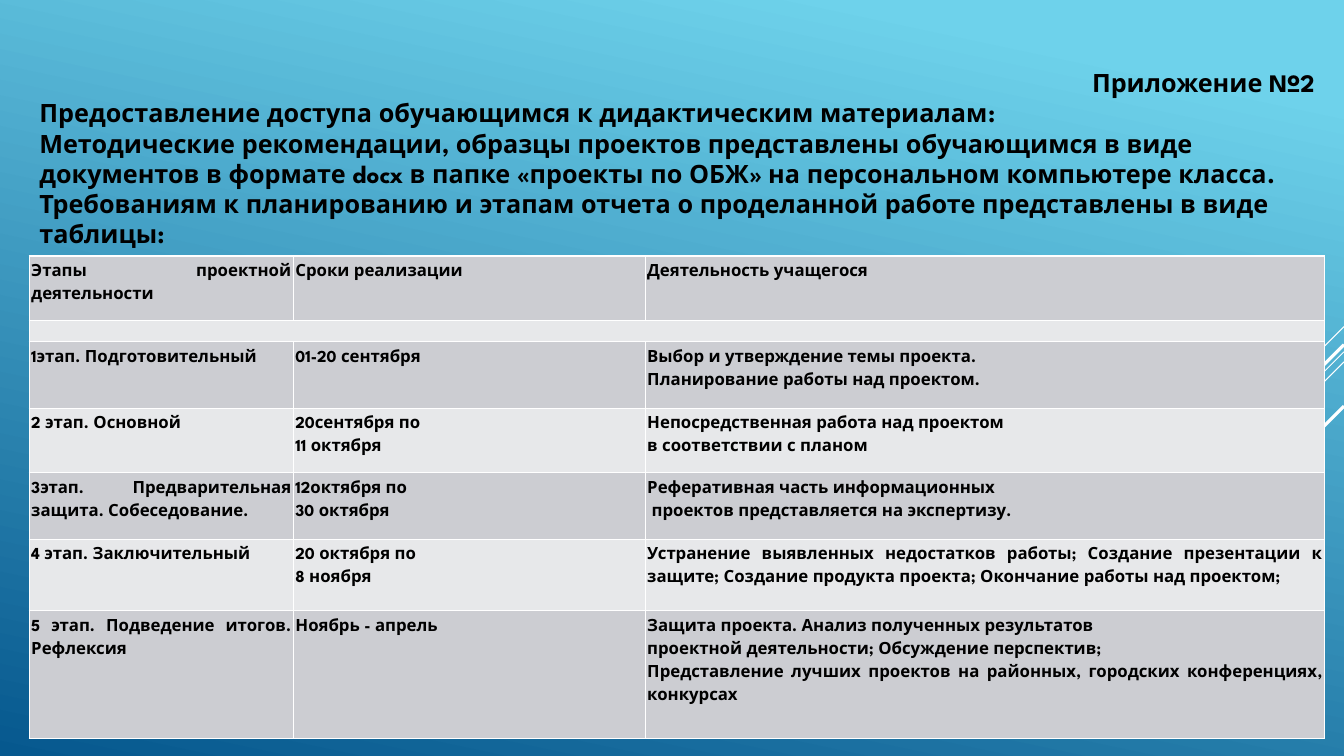
from typing import NamedTuple

import pptx
import pptx.dml.color
import pptx.enum.shapes
import pptx.enum.text
import pptx.oxml
import pptx.oxml.ns
import pptx.util

Inches = pptx.util.Inches
Pt = pptx.util.Pt
Align = pptx.enum.text.PP_ALIGN

FONT = "League Spartan"
COLORS = {
    "sky": "6ED2EB",
    "deep": "06588E",
    "text": "000000",
    "line": "FFFFFF",
    "dark_band": "CCCDD2",
    "light_band": "E7E8EA",
}


class Ray(NamedTuple):
    """Diagonal falling from the right edge at height top down to the left."""
    top: float
    reach: float
    weight: float


class Stage(NamedTuple):
    height: float
    name: list[str]
    dates: list[str]
    work: list[str]


RAYS = [
    Ray(3.24, 1.0, 0.75),
    Ray(3.49, 3.26, 0.75),
    Ray(3.59, 2.07, 0.75),
    Ray(3.42, 1.91, 2.25),
    Ray(4.03, 1.39, 2.25),
]

HEADING = [
    "Приложение №2",
    "Предоставление доступа обучающимся к дидактическим материалам:",
    "Методические рекомендации, образцы проектов представлены обучающимся в виде "
    "документов в формате docx в папке «проекты по ОБЖ» на персональном компьютере класса.",
    "Требованиям к планированию и этапам отчета о проделанной работе представлены "
    "в виде таблицы:",
]

COLUMN_WIDTHS = [2.62, 3.49, 6.74]
SPACER_ROW = 1
STAGES = [
    Stage(0.64, ["Этапы проектной деятельности"], ["Сроки реализации"],
          ["Деятельность учащегося"]),
    Stage(0.08, [], [], []),
    Stage(0.66, ["1этап. Подготовительный"], ["01-20 сентября"],
          ["Выбор и утверждение темы проекта.", "Планирование работы над проектом."]),
    Stage(0.64, ["2 этап. Основной"], ["20сентября по", "11 октября"],
          ["Непосредственная работа над проектом", "в соответствии с планом"]),
    Stage(0.66, ["3этап. Предварительная защита. Собеседование."],
          ["12октября по", "30 октября"],
          ["Реферативная часть информационных", " проектов представляется на экспертизу."]),
    Stage(0.71, ["4 этап. Заключительный"], ["20 октября по", "8 ноября"],
          ["Устранение выявленных недостатков работы; Создание презентации к защите; "
           "Создание продукта проекта; Окончание работы над проектом;"]),
    Stage(1.27, ["5 этап. Подведение итогов. Рефлексия"], ["Ноябрь - апрель"],
          ["Защита проекта. Анализ полученных результатов",
           "проектной деятельности; Обсуждение перспектив;",
           "Представление лучших проектов на районных, городских конференциях, конкурсах"]),
]


def rgb(name: str) -> pptx.dml.color.RGBColor:
    return pptx.dml.color.RGBColor.from_string(COLORS[name])


def write_paragraphs(frame, lines: list[str], size: float, align: Align,
                     spacing: float) -> None:
    for index, line in enumerate(lines):
        paragraph = frame.paragraphs[0] if index == 0 else frame.add_paragraph()
        paragraph.alignment = align
        paragraph.line_spacing = spacing
        run = paragraph.add_run()
        run.text = line
        run.font.name = FONT
        run.font.size = Pt(size)
        run.font.bold = True
        run.font.color.rgb = rgb("text")


def paint_background(slide) -> None:
    fill = slide.background.fill
    fill.gradient()
    fill.gradient_angle = 360 - 102
    for stop, position, name in zip(fill.gradient_stops, (0.1, 1), ("sky", "deep")):
        stop.position = position
        stop.color.rgb = rgb(name)


def draw_ray(slide, ray: Ray) -> None:
    right = 13.33
    line = slide.shapes.add_connector(
        pptx.enum.shapes.MSO_CONNECTOR.STRAIGHT, Inches(right), Inches(ray.top),
        Inches(right - ray.reach), Inches(ray.top + ray.reach))
    line.line.color.rgb = rgb("line")
    line.line.width = Pt(ray.weight)
    properties = line._element.spPr
    properties.append(properties.makeelement(pptx.oxml.ns.qn("a:effectLst"), {}))


def write_heading(slide) -> None:
    heading = slide.shapes.title
    heading.left, heading.top = Inches(0.29), Inches(0.62)
    heading.width, heading.height = Inches(12.85), Inches(1.92)
    frame = heading.text_frame
    frame.word_wrap = True
    frame.auto_size = pptx.enum.text.MSO_AUTO_SIZE.SHAPE_TO_FIT_TEXT
    frame.vertical_anchor = pptx.enum.text.MSO_ANCHOR.TOP
    write_paragraphs(frame, HEADING, 18, Align.LEFT, 1)
    frame.paragraphs[0].alignment = Align.RIGHT


def style_cell(cell, band: str) -> None:
    cell.margin_left = cell.margin_right = Inches(0.02)
    cell.margin_top, cell.margin_bottom = Inches(0.01), 0
    properties = cell._tc.get_or_add_tcPr()
    for side in ("lnL", "lnR", "lnT", "lnB"):
        properties.append(pptx.oxml.parse_xml(
            f'<a:{side} {pptx.oxml.ns.nsdecls("a")} w="{Pt(1)}"><a:solidFill>'
            f'<a:srgbClr val="{COLORS["line"]}"/></a:solidFill></a:{side}>'))
    cell.fill.solid()
    cell.fill.fore_color.rgb = rgb(band)


def set_empty_size(cell, size: float) -> None:
    """Keeps a row without text as low as a line of the given size."""
    cell.text_frame.paragraphs[0]._p.append(pptx.oxml.parse_xml(
        f'<a:endParaRPr {pptx.oxml.ns.nsdecls("a")} sz="{int(size * 100)}">'
        f'<a:latin typeface="{FONT}"/></a:endParaRPr>'))


def add_stage_table(slide) -> None:
    table = slide.shapes.add_table(
        len(STAGES), len(COLUMN_WIDTHS), Inches(0.29), Inches(2.54),
        Inches(sum(COLUMN_WIDTHS)), Inches(sum(stage.height for stage in STAGES))).table
    table.first_row = table.horz_banding = False
    for column, width in zip(table.columns, COLUMN_WIDTHS):
        column.width = Inches(width)
    for index, stage in enumerate(STAGES):
        row = table.rows[index]
        row.height = Inches(stage.height)
        band = "light_band" if index % 2 else "dark_band"
        for cell, lines in zip(row.cells, (stage.name, stage.dates, stage.work)):
            style_cell(cell, band)
            write_paragraphs(cell.text_frame, lines, 12, Align.JUSTIFY, 1.5)
            if not lines:
                set_empty_size(cell, 12)
    table.cell(SPACER_ROW, 0).merge(table.cell(SPACER_ROW, len(COLUMN_WIDTHS) - 1))


def main() -> None:
    deck = pptx.Presentation()
    deck.slide_width, deck.slide_height = Inches(13.33), Inches(7.5)
    slide = deck.slides.add_slide(deck.slide_layouts.get_by_name("Title Only"))
    paint_background(slide)
    for ray in RAYS:
        draw_ray(slide, ray)
    write_heading(slide)
    add_stage_table(slide)
    deck.save("out.pptx")


if __name__ == "__main__":
    main()
